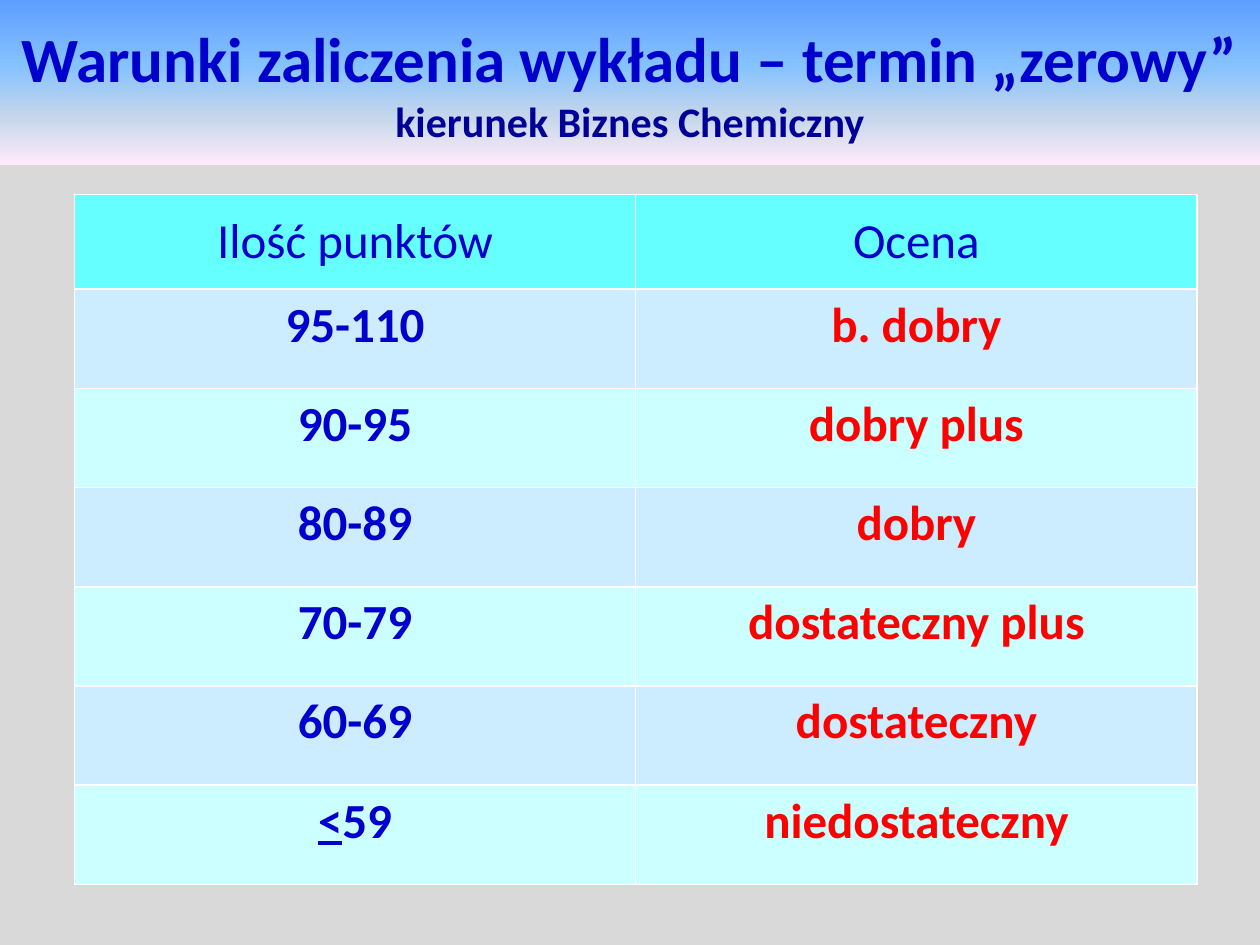
from dataclasses import dataclass

from lxml import etree
from pptx import Presentation
from pptx.dml.color import RGBColor
from pptx.enum.shapes import MSO_SHAPE
from pptx.enum.text import MSO_ANCHOR, PP_ALIGN
from pptx.oxml.ns import qn
from pptx.util import Inches, Pt

RECTANGLE = MSO_SHAPE.RECTANGLE
CENTER = PP_ALIGN.CENTER
MIDDLE, TOP = MSO_ANCHOR.MIDDLE, MSO_ANCHOR.TOP


@dataclass(frozen=True)
class Theme:
    font: str = "Calibri"
    title_size: int = 36
    subtitle_size: int = 24
    table_size: int = 28
    background: str = "D9D9D9"
    blue: str = "0000CC"
    navy: str = "000099"
    red: str = "FF0000"
    header_fill: str = "66FFFF"
    row_fills: tuple = ("CCECFF", "CCFFFF")
    banner_stops: tuple = ((0, "5E9EFF"), (40, "85C2FF"), (70, "C4D6EB"), (100, "FFEBFA"))


class GradePage:
    """Holds the theme and the current slide; lengths are shares of the slide."""

    def __init__(self, deck, theme):
        self.theme = theme
        self.width, self.height = deck.slide_width, deck.slide_height
        self.page = deck.slides.add_slide(deck.slide_layouts[6])
        fill = self.page.background.fill
        fill.solid()
        fill.fore_color.rgb = RGBColor.from_string(theme.background)

    def area(self, left, top, width, height):
        return (round(left * self.width), round(top * self.height),
                round(width * self.width), round(height * self.height))

    def style(self, para, size, color, bold):
        para.alignment = CENTER
        for span in para.runs:
            span.font.name = self.theme.font
            span.font.size = Pt(size)
            span.font.bold = bold
            span.font.color.rgb = RGBColor.from_string(color)

    def gradient(self, shape, stops):
        """Fill a shape from top to bottom with any number of stops."""
        shape.fill.gradient()
        shape.fill.gradient_angle = 270
        stop_list = shape.fill._fill._gradFill.find(qn("a:gsLst"))
        for stop in list(stop_list):
            stop_list.remove(stop)
        for percent, color in stops:
            stop = etree.SubElement(stop_list, qn("a:gs"), pos=str(percent * 1000))
            etree.SubElement(stop, qn("a:srgbClr"), val=color)

    def banner(self, area, lines):
        box = self.page.shapes.add_shape(RECTANGLE, *self.area(*area))
        box.shadow.inherit = False
        box.line.fill.background()
        self.gradient(box, self.theme.banner_stops)
        frame = box.text_frame
        frame.word_wrap = True
        frame.vertical_anchor = MIDDLE
        frame.text = "\n".join(text for text, _, _ in lines)
        for para, (_, size, color) in zip(frame.paragraphs, lines):
            self.style(para, size, color, True)

    def cell(self, cell, text, fill, color, header):
        cell.text = text
        cell.fill.solid()
        cell.fill.fore_color.rgb = RGBColor.from_string(fill)
        cell.vertical_anchor = MIDDLE if header else TOP
        self.style(cell.text_frame.paragraphs[0], self.theme.table_size, color, not header)

    def table(self, area, header_height, rows):
        theme = self.theme
        frame = self.page.shapes.add_table(len(rows), len(rows[0]), *self.area(*area))
        table = frame.table
        header = round(header_height * self.height)
        body = (frame.height - header) // (len(rows) - 1)
        for index, row in enumerate(rows):
            is_header = index == 0
            table.rows[index].height = header if is_header else body
            fill = theme.header_fill if is_header else theme.row_fills[(index - 1) % 2]
            for column, text in enumerate(row):
                color = theme.red if column and not is_header else theme.blue
                self.cell(table.cell(index, column), text, fill, color, is_header)
        return table

    def underline_first(self, cell):
        """Split off the first character of a cell and underline it."""
        para = cell.text_frame.paragraphs[0]
        text, font = para.text, para.runs[0].font
        size, color, bold = font.size.pt, str(font.color.rgb), font.bold
        para.runs[0].text = text[0]
        para.add_run().text = text[1:]
        self.style(para, size, color, bold)
        para.runs[0].font.underline = True


def main():
    deck = Presentation()
    deck.slide_width, deck.slide_height = Inches(10), Inches(7.5)
    theme = Theme()
    page = GradePage(deck, theme)

    # Grading table
    grades = page.table((0.059, 0.206, 0.891, 0.73), 0.1, [
        ("Ilość punktów", "Ocena"),
        ("95-110", "b. dobry"),
        ("90-95", "dobry plus"),
        ("80-89", "dobry"),
        ("70-79", "dostateczny plus"),
        ("60-69", "dostateczny"),
        ("<59", "niedostateczny"),
    ])
    page.underline_first(grades.cell(6, 0))

    # Title banner
    page.banner((0, 0, 1, 0.175), [
        ("Warunki zaliczenia wykładu – termin „zerowy”", theme.title_size, theme.blue),
        ("kierunek Biznes Chemiczny", theme.subtitle_size, theme.navy),
    ])

    deck.save("out.pptx")


if __name__ == "__main__":
    main()
